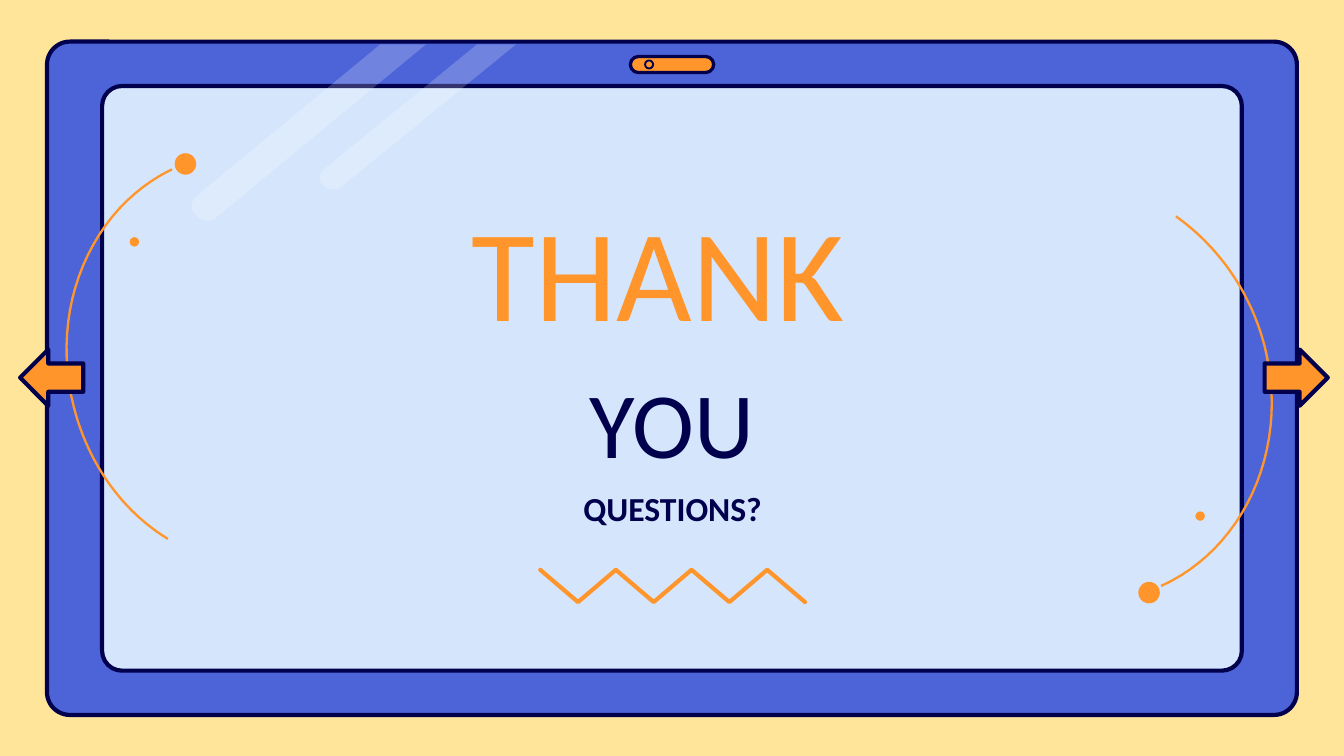
import pptx
import pptx.util
import pptx.dml.color
import pptx.enum.shapes
import pptx.enum.text
from lxml import etree
from pptx.util import Inches

THEME = {
    "sand": "FFE599", "blue": "4C64D8", "sky": "D5E6FC", "navy": "00004D",
    "orange": "FF952B", "white": "FFFFFF", "font": "Calibri",
    "title": 70, "word": 50, "question": 18,
    "outline": 2.25, "camera": 1.75, "lens": 1, "arc": 1.25,
}
SLIDE_WIDTH = 10
SLIDE_HEIGHT = SLIDE_WIDTH * 9 / 16
SHAPE = pptx.enum.shapes.MSO_SHAPE
ANCHOR = pptx.enum.text.MSO_ANCHOR

# Content: text, box, size, colour, bold, anchor
TEXTS = [
    ("YOU", (2, 2.32, 6, 1.23), "word", "navy", False, ANCHOR.BOTTOM),
    ("QUESTIONS?", (2.73, 3.63, 4.55, 0.37), "question", "navy", True, ANCHOR.TOP),
    ("THANK ", (2.73, 1.62, 4.55, 0.77), "title", "orange", False, ANCHOR.MIDDLE),
]
# Preset shapes: kind, box, fill, outline width, adjustments
TABLET = [
    (SHAPE.ROUNDED_RECTANGLE, (0.35, 0.31, 9.3, 5.01), "blue", "outline", [0.034]),
    (SHAPE.ROUNDED_RECTANGLE, (0.76, 0.64, 8.48, 4.35), "sky", "outline", [0.034]),
]
CAMERA = [
    (SHAPE.ROUNDED_RECTANGLE, (4.69, 0.42, 0.62, 0.12), "orange", "camera", [0.5]),
    (SHAPE.OVAL, (4.8, 0.45, 0.06, 0.06), "orange", "lens", []),
]
ARROWS = [
    (SHAPE.LEFT_ARROW, (0.15, 2.6, 0.47, 0.42), "orange", "outline", [0.5, 0.5]),
    (SHAPE.RIGHT_ARROW, (9.41, 2.6, 0.47, 0.42), "orange", "outline", [0.5, 0.5]),
]
# Dots: centre and diameter
DOTS = [(8.55, 4.41, 0.16), (8.93, 3.84, 0.07), (1.38, 1.22, 0.16), (1.0, 1.8, 0.07)]
# Outlines: a start point, then points (x, y) or curves (two controls and an end)
GLARES = [
    [(3.17, 0.33), (1.62, 1.61), (1.59, 1.64, 1.57, 1.64, 1.54, 1.64),
     (1.51, 1.64, 1.48, 1.63, 1.46, 1.6), (1.41, 1.57, 1.42, 1.5, 1.46, 1.46), (2.83, 0.33)],
    [(3.84, 0.33), (2.54, 1.39), (2.52, 1.41, 2.5, 1.41, 2.48, 1.41),
     (2.45, 1.41, 2.42, 1.4, 2.41, 1.38), (2.36, 1.35, 2.38, 1.29, 2.41, 1.26), (3.55, 0.33)],
]
ARCS = [
    [(8.64, 4.36), (9.24, 4.09, 9.59, 3.37, 9.42, 2.62), (9.32, 2.18, 9.06, 1.83, 8.75, 1.61)],
    [(1.28, 1.26), (0.68, 1.55, 0.36, 2.29, 0.55, 3.03), (0.66, 3.46, 0.92, 3.81, 1.25, 4.01)],
]
ZIGZAG = [(4.02 + 1.97 * i / 7, 4.48 if i % 2 else 4.24) for i in range(8)]


def color(name):
    return pptx.dml.color.RGBColor.from_string(THEME[name])


def style(sp, fill=None, line=None, width=None):
    sp.shadow.inherit = False
    if fill:
        sp.fill.solid()
        sp.fill.fore_color.rgb = color(fill)
    else:
        sp.fill.background()
    if line:
        sp.line.color.rgb = color(line)
        sp.line.width = pptx.util.Pt(THEME[width])
    else:
        sp.line.fill.background()


def add_preset(slide, kind, box, fill, width=None, adjustments=()):
    sp = slide.shapes.add_shape(kind, *map(Inches, box))
    for i, value in enumerate(adjustments):
        sp.adjustments[i] = value
    style(sp, fill, "navy" if width else None, width)


def flatten(outline, steps=24):
    """Turn an outline with Bezier curves into plain points."""
    points = [outline[0]]
    for part in outline[1:]:
        if len(part) == 2:
            points.append(part)
            continue
        a, b, c, d = points[-1], part[:2], part[2:4], part[4:]
        for i in range(1, steps + 1):
            t = i / steps
            u = 1 - t
            points.append(tuple(
                u**3 * a[k] + 3 * u * u * t * b[k] + 3 * u * t * t * c[k] + t**3 * d[k]
                for k in (0, 1)))
    return points


def add_outline(slide, outline, closed):
    points = [(Inches(x), Inches(y)) for x, y in flatten(outline)]
    builder = slide.shapes.build_freeform(*points[0])
    builder.add_line_segments(points[1:], close=closed)
    return builder.convert_to_shape()


def add_text(slide, text, box, size, ink, bold, anchor):
    tf = slide.shapes.add_textbox(*map(Inches, box)).text_frame
    tf.word_wrap = True
    tf.vertical_anchor = anchor
    tf.margin_left = tf.margin_right = tf.margin_top = tf.margin_bottom = 0
    tf.text = text
    p = tf.paragraphs[0]
    p.alignment = pptx.enum.text.PP_ALIGN.CENTER
    font = p.runs[0].font
    font.name, font.size, font.bold = THEME["font"], pptx.util.Pt(THEME[size]), bold
    font.color.rgb = color(ink)


def main():
    prs = pptx.Presentation()
    prs.slide_width, prs.slide_height = Inches(SLIDE_WIDTH), Inches(SLIDE_HEIGHT)
    slide = prs.slides.add_slide(prs.slide_layouts[6])
    slide.background.fill.solid()
    slide.background.fill.fore_color.rgb = color("sand")

    # Tablet with glare and camera
    for item in TABLET:
        add_preset(slide, *item)
    for glare in GLARES:
        sp = add_outline(slide, glare, True)
        style(sp, "white")
        rgb = sp.element.spPr.find("{*}solidFill/{*}srgbClr")
        etree.SubElement(rgb, rgb.tag.replace("srgbClr", "alpha"), val="20000")
    for item in CAMERA:
        add_preset(slide, *item)

    # Words
    for item in TEXTS:
        add_text(slide, *item)

    # Zigzag with round ends, side arcs and dots
    sp = add_outline(slide, ZIGZAG, False)
    style(sp, None, "orange", "outline")
    sp.element.spPr.find("{*}ln").set("cap", "rnd")
    for arc in ARCS:
        style(add_outline(slide, arc, False), None, "orange", "arc")
    for x, y, d in DOTS:
        add_preset(slide, SHAPE.OVAL, (x - d / 2, y - d / 2, d, d), "orange")

    # Navigation arrows
    for item in ARROWS:
        add_preset(slide, *item)

    prs.save("out.pptx")


if __name__ == "__main__":
    main()
